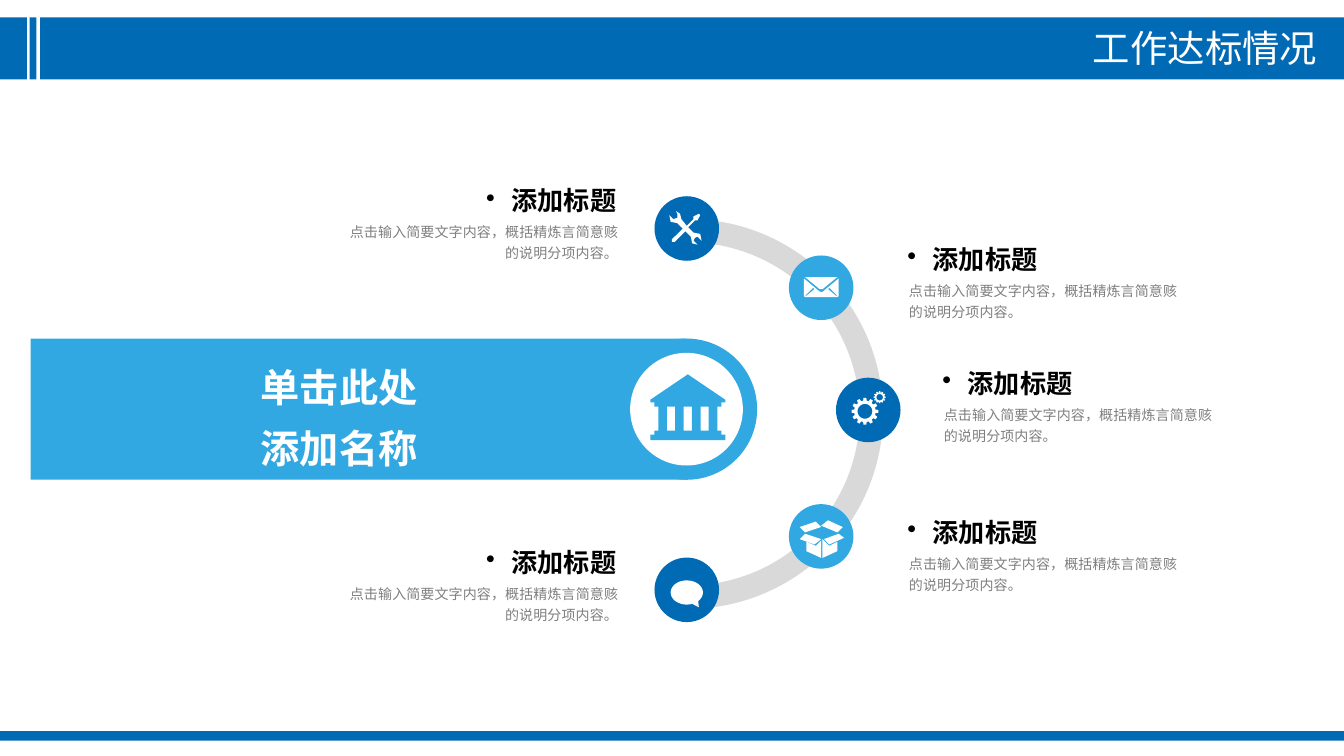
from dataclasses import dataclass
from math import cos, pi, sin

from lxml import etree
from pptx import Presentation
from pptx import util as u
from pptx.dml.color import RGBColor
from pptx.enum import shapes, text
from pptx.oxml import ns

Cm, Pt = u.Cm, u.Pt
SHAPE, ALIGN = shapes.MSO_SHAPE, text.PP_ALIGN


@dataclass(frozen=True)
class Theme:
    font: str = "Arial"
    deep: str = "006AB5"
    sky: str = "31A8E1"
    white: str = "FFFFFF"
    track: str = "D9D9D9"
    black: str = "000000"
    grey: str = "7F7F7F"
    title: float = 20
    name: float = 21
    head: float = 14
    body: float = 7.5
    gap: float = 7.5


T = Theme()


def paint(shape, tone):
    shape.shadow.inherit = False
    shape.fill.solid()
    shape.fill.fore_color.rgb = RGBColor.from_string(tone)
    shape.line.fill.background()
    return shape


def block(root, kind, box, tone):
    return paint(root.add_shape(kind, *map(Cm, box)), tone)


def write(para, words, size, tone, bold=False):
    run = para.add_run()
    run.text = words
    run.font.name, run.font.size, run.font.bold = T.font, Pt(size), bold
    run.font.color.rgb = RGBColor.from_string(tone)


def frame(root, box):
    area = root.add_textbox(*map(Cm, box)).text_frame
    area.word_wrap = True
    area.margin_left = area.margin_right = area.margin_top = area.margin_bottom = 0
    return area


def trace(root, box, span, loops, tone):
    left, top, wide, high = box
    unit = Cm(wide) / span
    pen = None
    for loop in loops:
        (x, y), *rest = [(px * unit, py * unit) for px, py in loop]
        if pen is None:
            pen = root.build_freeform(x, y)
        else:
            pen.move_to(x, y)
        pen.add_line_segments(rest, close=True)
    paint(pen.convert_to_shape(Cm(left + wide / 2), Cm(top + high / 2)), tone)


def curve(mid, wide, high, start=0, end=360, count=40):
    turns = [(start + (end - start) * i / count) * pi / 180 for i in range(count + 1)]
    return [(mid[0] + wide * cos(a), mid[1] + high * sin(a)) for a in turns]


def gear(mid, tip, root, hole, teeth=12):
    rim = []
    for i in range(teeth):
        for part, size in ((-0.32, root), (-0.2, tip), (0.2, tip), (0.32, root)):
            a = 2 * pi * (i + part) / teeth
            rim.append((mid[0] + size * cos(a), mid[1] + size * sin(a)))
    return [rim, curve(mid, hole, hole)]


def bank(shift=1):
    half = [(0, -26), (28, -7), (28, -5), (25, -5), (25, -2), (22, -2),
            (22, 16), (25, 16), (25, 19), (28, 19), (28, 23)]
    wall = half + [(-x, y) for x, y in half[:0:-1]]
    gaps = [[(x - 3, -2), (x + 3, -2), (x + 3, 16), (x - 3, 16)]
            for x in (-12.5, 0, 12.5)]
    return [[(x + shift, y) for x, y in loop] for loop in [wall] + gaps]


TOOLS = [[[
    (10, 4), (5, 3), (1, -1), (6, -6), (8, -6), (10, -10), (9, -11), (5, -9),
    (5, -7), (0, -2), (-4, -7), (-5, -11), (-8, -13), (-7, -11), (-7, -8),
    (-10, -7), (-13, -10), (-12, -5), (-7, -4), (-3, 0), (-11, 8), (-11, 10),
    (-9, 10), (-1, 2), (3, 6), (4, 11), (8, 12), (5, 9), (6, 7), (8, 6), (11, 9)]]]
SLIT = [(5, 1), (11, 6), (12, 6), (6, 0)]
MAIL = [
    [[(12, -8), (-12, -8), (-1, 1), (1, 1)]],
    [[(1, 3), (-1, 3), (-13, -7), (-13, 6), (-12, 7), (12, 7), (13, 6), (13, -7)],
     SLIT, [(-x, y) for x, y in SLIT]]]
GEARS = [gear((-2.5, 1), 10, 8, 5.5), gear((8.5, -9.5), 4.5, 3.6, 2.4)]
CRATE = [[loop] for loop in (
    [(0, -7), (-4, -11), (-16, -7), (-12, -3)],
    [(1, 2), (1, 16), (12, 11), (12, 4), (6, 7)],
    [(2, 2), (6, 6), (17, 1), (13, -2)],
    [(16, -7), (5, -12), (0, -8), (12, -3)],
    [(-11, 4), (-11, 11), (0, 16), (0, 3), (-4, 7)],
    [(0, 2), (-12, -2), (-16, 2), (-5, 6)])]
CHAT = [[curve((0, 2), 12, 9, 70, 405) + [(9, 13)]]]


def header(slide, box):
    left, top, wide, high = box
    for x, w in ((0.76, wide - 0.76), (0, 0.51), (0.56, 0.13)):
        block(slide.shapes, SHAPE.RECTANGLE, (left + x, top, w, high), T.deep)
    title = slide.shapes.title
    title.left, title.top = Cm(left + 14.3), Cm(top)
    title.width, title.height = Cm(10.85), Cm(1.12)
    title.element.getparent().append(title.element)
    area = title.text_frame
    area.vertical_anchor = text.MSO_ANCHOR.MIDDLE
    para = area.paragraphs[0]
    para.alignment = ALIGN.RIGHT
    write(para, "工作达标情况", T.title, T.white)


def track(slide, box):
    arc = block(slide.shapes, SHAPE.BLOCK_ARC, box, T.track)
    for i, value in enumerate((162, 54, 0.06)):
        arc.adjustments[i] = value


def badge(slide, box, tone, icon):
    block(slide.shapes, SHAPE.OVAL, box, tone)
    root = slide.shapes.add_group_shape().shapes if len(icon) > 1 else slide.shapes
    for loops in icon:
        trace(root, box, 48, loops, T.white)


def item(slide, box, side):
    left, top, wide, high = box
    para = frame(slide.shapes, (left + 0.03, top + 0.59, wide, high - 0.59)).paragraphs[0]
    para.alignment, para.line_spacing = side, 1.25
    write(para, "点击输入简要文字内容，概括精炼言简意赅的说明分项内容。", T.body, T.grey)
    para = frame(slide.shapes, (left, top, wide, 0.58)).paragraphs[0]
    para.alignment, para.line_spacing, para.space_before = side, 0.9, Pt(T.gap)
    props = para._p.get_or_add_pPr()
    props.set("marL", str(Cm(0.48)))
    props.set("indent", str(-Cm(0.48)))
    etree.SubElement(props, ns.qn("a:buChar")).set("char", "•")
    write(para, "添加标题", T.head, T.black, True)


def banner(slide, box):
    left, top, wide, high = box
    root = slide.shapes.add_group_shape().shapes
    block(root, SHAPE.RECTANGLE, (left, top, wide - high / 2, high), T.sky)
    block(root, SHAPE.OVAL, (left + wide - high, top, high, high), T.sky)
    disc = (left + wide - high + 0.27, top + 0.27, high - 0.54, high - 0.54)
    block(root, SHAPE.OVAL, disc, T.white)
    area = frame(root, (left + 4.35, top + 0.46, 5.28, 1.7))
    for para, words in ((area.paragraphs[0], "单击此处"), (area.add_paragraph(), "添加名称")):
        para.alignment, para.space_before = ALIGN.LEFT, Pt(T.gap)
        write(para, words, T.name, T.white, True)
    trace(slide.shapes, disc, 84, bank(), T.sky)


def main():
    deck = Presentation()
    deck.slide_width, deck.slide_height = Cm(25.4), Cm(14.29)
    slide = deck.slides.add_slide(deck.slide_layouts[5])
    header(slide, (0, 0.33, 25.4, 1.17))
    block(slide.shapes, SHAPE.RECTANGLE, (0, 13.82, 25.4, 0.18), T.deep)
    track(slide, (9.32, 4.14, 7.37, 7.37))
    stops = (
        (12.37, 3.71, T.deep, TOOLS, 6.38, 3.56, ALIGN.RIGHT),
        (14.91, 4.83, T.sky, MAIL, 17.15, 4.67, ALIGN.LEFT),
        (15.8, 7.14, T.deep, GEARS, 17.81, 7.01, ALIGN.LEFT),
        (14.91, 9.53, T.sky, CRATE, 17.15, 9.83, ALIGN.LEFT),
        (12.37, 10.54, T.deep, CHAT, 6.38, 10.39, ALIGN.RIGHT),
    )
    for x, y, tone, icon, left, top, side in stops:
        badge(slide, (x, y, 1.22, 1.22), tone, icon)
        item(slide, (left, top, 5.27, 1.76), side)
    banner(slide, (0.58, 6.4, 13.73, 2.67))
    deck.save("out.pptx")


if __name__ == "__main__":
    main()
